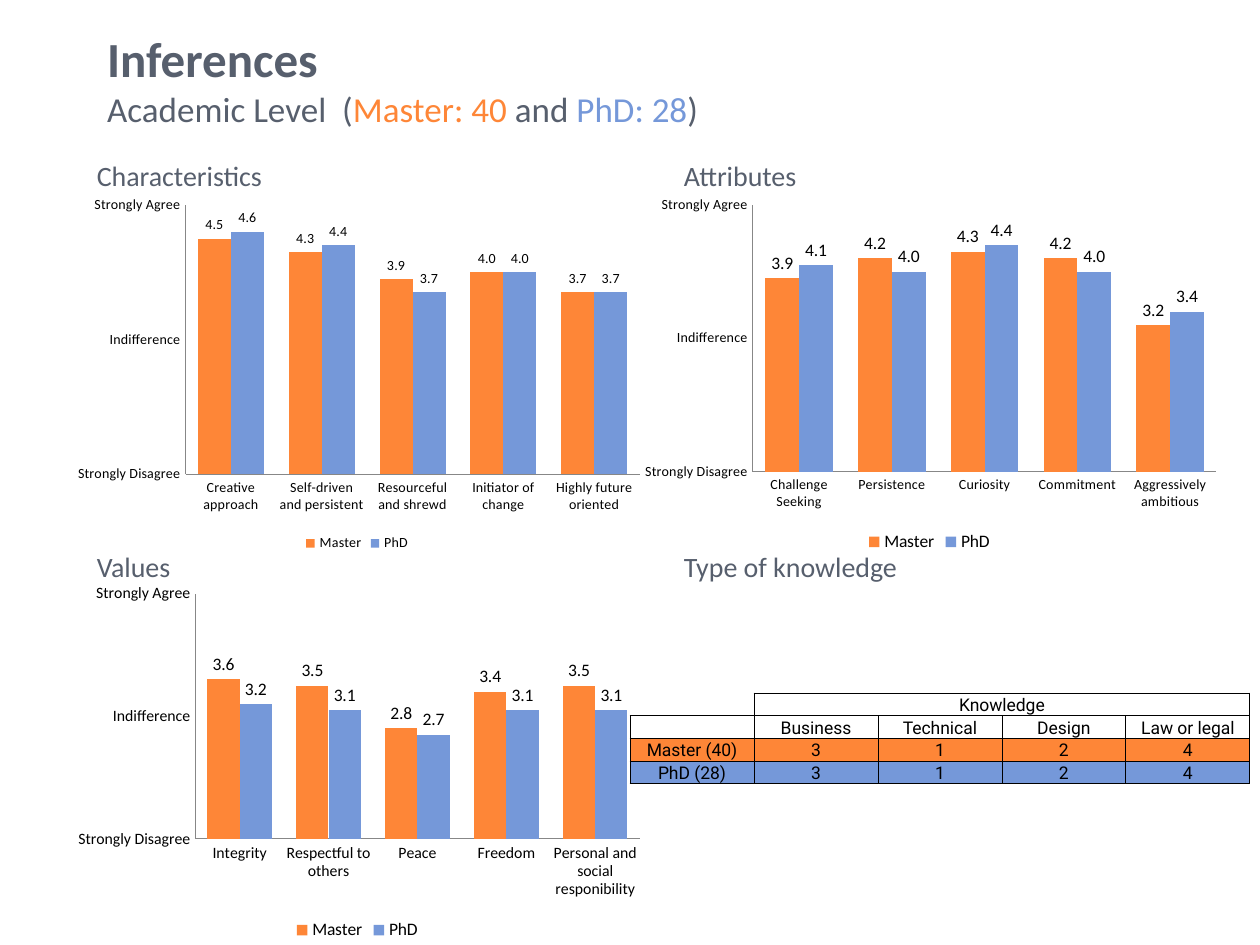
from pptx import Presentation
from pptx.chart.data import CategoryChartData
from pptx.dml.color import RGBColor
from pptx.enum.chart import XL_CHART_TYPE as ChartType
from pptx.enum.chart import XL_LABEL_POSITION as LabelPosition
from pptx.enum.chart import XL_LEGEND_POSITION as LegendPosition
from pptx.enum.chart import XL_TICK_MARK as TickMark
from pptx.enum.text import MSO_ANCHOR as Anchor
from pptx.enum.text import PP_ALIGN as Align
from pptx.oxml import parse_xml
from pptx.oxml.ns import nsdecls
from pptx.util import Inches, Pt

MASTER, PHD = "FE8637", "7598D9"
SLATE, BLACK, WHITE, GREY = "575F6D", "000000", "FFFFFF", "878787"
AGREEMENT = r'[=1]\ "Strongly Disagree";[=3]\ \ "Indifference";\ "Strongly Agree"'

CHARTS = [
    # left, top, width, text size, axis size, categories, Master, PhD
    (0.5, 1.5, 4.67, 8, 8,
     ["Creative approach", "Self-driven and persistent",
      "Resourceful and shrewd", "Initiator of change",
      "Highly future oriented"],
     [4.5, 4.3, 3.9, 4.0, 3.7], [4.6, 4.4, 3.7, 4.0, 3.7]),
    (5, 1.5, 4.75, 10, 8,
     ["Challenge Seeking", "Persistence", "Curiosity", "Commitment",
      "Aggressively ambitious"],
     [3.9, 4.2, 4.3, 4.2, 3.2], [4.1, 4.0, 4.4, 4.0, 3.4]),
    (0.5, 4.58, 4.67, 10, 9,
     ["Integrity", "Respectful to others", "Peace", "Freedom",
      "Personal and social responibility"],
     [3.6, 3.5, 2.8, 3.4, 3.5], [3.2, 3.1, 2.7, 3.1, 3.1]),
]

KNOWLEDGE = [
    (WHITE, ["", "Knowledge", "", "", ""]),
    (WHITE, ["", "Business", "Technical", "Design", "Law or legal"]),
    (MASTER, ["Master (40)", "3", "1", "2", "4"]),
    (PHD, ["PhD (28)", "3", "1", "2", "4"]),
]


def color(hex_string):
    return RGBColor.from_string(hex_string)


def add_border(cell, side, visible):
    """Draw or clear one side of a cell: L, R, T or B."""
    paint = (f'<a:solidFill><a:srgbClr val="{BLACK}"/></a:solidFill>'
             if visible else "<a:noFill/>")
    cell._tc.get_or_add_tcPr().append(parse_xml(
        f'<a:ln{side} {nsdecls("a")} w="{Pt(0.5)}">{paint}</a:ln{side}>'))


class SlideBuilder:
    def __init__(self, page, font="Calibri", table_font="Roboto"):
        self.page = page
        self.font = font
        self.table_font = table_font

    def add_span(self, para, text, size, hex_string, bold=False, font=None):
        span = para.add_run()
        span.text = text
        span.font.name = font or self.font
        span.font.size = Pt(size)
        span.font.bold = bold
        span.font.color.rgb = color(hex_string)

    def title(self, heading, parts):
        box = self.page.shapes.title
        box.left, box.top = Inches(0.75), Inches(0.17)
        box.width, box.height = Inches(9), Inches(0.92)
        box.text_frame.vertical_anchor = Anchor.MIDDLE
        para = box.text_frame.paragraphs[0]
        para.alignment = Align.LEFT
        self.add_span(para, heading, 28, SLATE, bold=True)
        para.add_line_break()
        for text, hex_string in parts:
            self.add_span(para, text, 20, hex_string)

    def heading(self, left, top, text):
        box = self.page.shapes.add_textbox(
            Inches(left), Inches(top), Inches(5), Inches(0.37))
        box.text_frame.word_wrap = True
        self.add_span(box.text_frame.paragraphs[0], text, 16, SLATE)

    def chart(self, left, top, width, size, axis_size, categories, master, phd):
        data = CategoryChartData(number_format="0.0")
        data.categories = categories
        data.add_series("Master", master)
        data.add_series("PhD", phd)
        chart = self.page.shapes.add_chart(
            ChartType.COLUMN_CLUSTERED, Inches(left), Inches(top),
            Inches(width), Inches(2.92), data).chart
        chart.has_title = False
        chart.font.name = self.font
        chart.font.size = Pt(size)
        chart.font.color.rgb = color(BLACK)
        chart.has_legend = True
        chart.legend.position = LegendPosition.BOTTOM
        chart.legend.include_in_layout = False

        plot = chart.plots[0]
        plot.gap_width = 75
        plot.vary_by_categories = False
        for series, hex_string in zip(plot.series, (MASTER, PHD)):
            series.format.fill.solid()
            series.format.fill.fore_color.rgb = color(hex_string)
            labels = series.data_labels
            labels.show_value = True
            labels.number_format = "0.0"
            labels.number_format_is_linked = False
            labels.position = LabelPosition.OUTSIDE_END

        for axis in (chart.category_axis, chart.value_axis):
            axis.has_major_gridlines = False
            axis.major_tick_mark = axis.minor_tick_mark = TickMark.NONE
            axis.tick_labels.font.size = Pt(axis_size)
            axis.format.line.color.rgb = color(GREY)
            axis.format.line.width = Pt(0.75)
        scale = chart.value_axis
        scale.minimum_scale, scale.maximum_scale = 1, 5
        scale.major_unit = 2
        scale.tick_labels.number_format = AGREEMENT
        scale.tick_labels.number_format_is_linked = False

    def table(self, left, top, width, row_height, rows):
        column_count = len(rows[0][1])
        table = self.page.shapes.add_table(
            len(rows), column_count, Inches(left), Inches(top),
            Inches(width), Inches(row_height * len(rows))).table
        table.first_row = table.horz_banding = False
        for row_index, (fill, texts) in enumerate(rows):
            table.rows[row_index].height = Inches(row_height)
            for column_index, text in enumerate(texts):
                cell = table.cell(row_index, column_index)
                is_corner = row_index == column_index == 0
                self.cell(cell, text, fill, is_corner)
        table.cell(0, 1).merge(table.cell(0, column_count - 1))

    def cell(self, cell, text, fill, is_corner):
        cell.margin_left = cell.margin_right = 0
        cell.margin_top = cell.margin_bottom = 0
        cell.vertical_anchor = Anchor.BOTTOM
        for side in "LRTB":
            add_border(cell, side, visible=not (is_corner and side in "LT"))
        cell.fill.solid()
        cell.fill.fore_color.rgb = color(fill)
        para = cell.text_frame.paragraphs[0]
        para.alignment = Align.CENTER
        if text:
            self.add_span(para, text, 10, BLACK, font=self.table_font)
        else:
            # An empty cell would otherwise stretch its row to 18 pt text.
            para._p.get_or_add_endParaRPr().set("sz", "1000")


def main():
    deck = Presentation()
    deck.slide_width, deck.slide_height = Inches(10), Inches(7.5)
    title_only = deck.slide_layouts[5]
    builder = SlideBuilder(deck.slides.add_slide(title_only))

    builder.title("Inferences", [
        ("Academic Level  (", SLATE), ("Master: 40", MASTER),
        (" and ", SLATE), ("PhD: 28", PHD), (")", SLATE)])
    headings = [("Characteristics", "Attributes"),
                ("Values", "Type of knowledge")]
    for top, pair in zip((1.21, 4.31), headings):
        for left, text in zip((0.67, 5.33), pair):
            builder.heading(left, top, text)
    for chart in CHARTS:
        builder.chart(*chart)
    builder.table(5, 5.5, 4.92, 0.18, KNOWLEDGE)

    deck.save("out.pptx")


if __name__ == "__main__":
    main()
